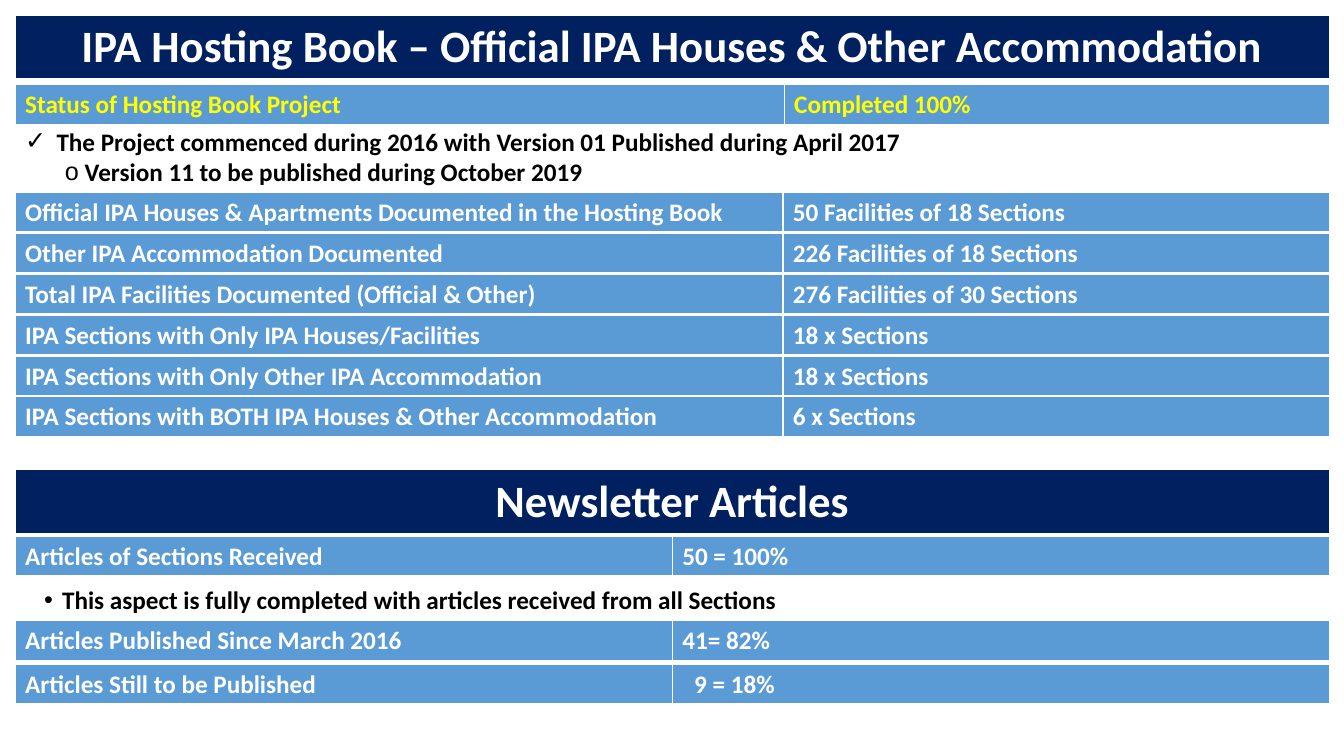
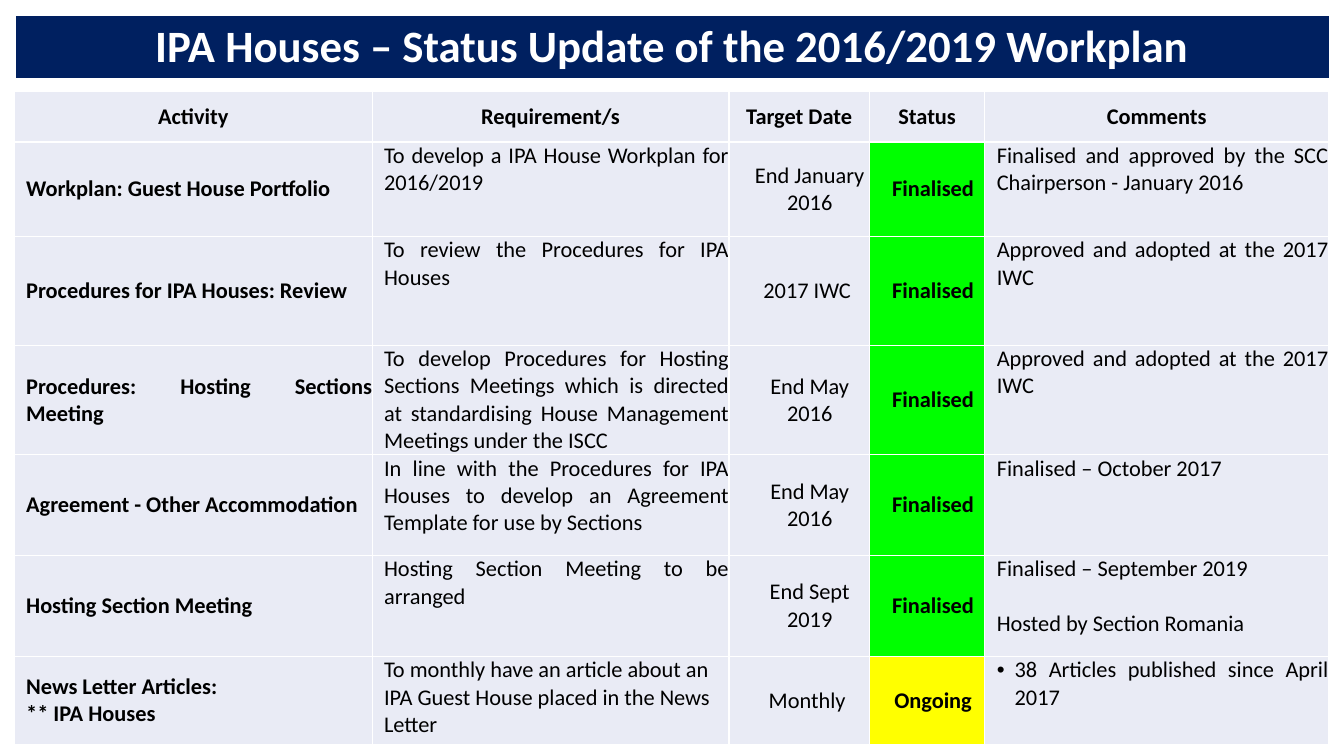
from dataclasses import dataclass

from lxml import etree
from pptx import Presentation
from pptx import util as u
from pptx.dml.color import RGBColor
from pptx.enum import text
from pptx.oxml.ns import qn

# Shared look
NAVY, BLUE, PALE = "002060", "5B9BD5", "E9EBF5"
GREEN, YELLOW, WHITE, BLACK = "00FF00", "FFFF00", "FFFFFF", "000000"
FONT = "Calibri"
LEFT, WIDTH = 0.38, 33.12
BAND_HEIGHT, FACT_HEIGHT = 1.58, 1.02
PAD = 0.23
TEXT_INDENT = 0.3
ALIGN = text.PP_ALIGN
MIDDLE, TOP = text.MSO_ANCHOR.MIDDLE, text.MSO_ANCHOR.TOP


@dataclass
class Line:
    """One formatted paragraph; lengths in centimetres, sizes in points."""
    words: str
    size: int = 18
    color: str = BLACK
    bold: bool = True
    align: ALIGN = ALIGN.LEFT
    margin: float = 0
    hanging: float = 0
    bullet: str = ""
    before: float = 0


@dataclass
class FactGroup:
    """Blue two-column strips, stacked at an equal pitch."""
    top: float
    pitch: float
    first_column: float
    facts: list[tuple[str, str]]
    color: str = WHITE


@dataclass
class Activity:
    """One row of the workplan."""
    name: str
    requirement: str
    target: str
    status: str
    comments: list[str]
    height: float
    name_align: ALIGN = ALIGN.LEFT
    requirement_align: ALIGN = ALIGN.JUSTIFY
    comment_bullet: str = ""


def rgb(color: str) -> RGBColor:
    return RGBColor.from_string(color)


def write(frame, lines: list[Line]) -> None:
    """Fill a text frame with formatted paragraphs."""
    for number, line in enumerate(lines):
        para = frame.add_paragraph() if number else frame.paragraphs[0]
        para.text = line.words
        para.alignment = line.align
        para.space_before = u.Pt(line.before)
        para.font.name = FONT
        para.font.size = u.Pt(line.size)
        para.font.bold = line.bold
        para.font.color.rgb = rgb(line.color)
        # Indents and bullets
        props = para._p.get_or_add_pPr()
        props.set("marL", str(u.Cm(line.margin)))
        props.set("indent", str(-u.Cm(line.hanging)))
        marks = [etree.Element(qn("a:buNone"))]
        if line.bullet:
            marks = [etree.Element(qn("a:buFont"), typeface="Arial"),
                     etree.Element(qn("a:buChar"), char=line.bullet)]
        for mark in marks:
            props.find(qn("a:defRPr")).addprevious(mark)


def add_borders(cell, bottom: float) -> None:
    """White cell borders, with their own width at the bottom."""
    props = cell._tc.get_or_add_tcPr()
    for side, points in (("L", 1), ("R", 1), ("T", 1), ("B", bottom)):
        edge = etree.SubElement(props, qn(f"a:ln{side}"), w=str(u.Pt(points)))
        fill = etree.SubElement(edge, qn("a:solidFill"))
        etree.SubElement(fill, qn("a:srgbClr"), val=WHITE)


def add_grid(page, top: float, columns: list[float], heights: list[float],
             left: float = LEFT):
    """Add an unstyled table and return it."""
    frame = page.shapes.add_table(
        len(heights), len(columns), u.Cm(left), u.Cm(top),
        u.Cm(sum(columns)), u.Cm(sum(heights)))
    table = frame.table
    table.first_row = table.horz_banding = False
    for column, width in zip(table.columns, columns):
        column.width = u.Cm(width)
    for row, height in zip(table.rows, heights):
        row.height = u.Cm(height)
    return table


def set_cell(cell, lines: list[Line], fill: str, bottom: float = 1) -> None:
    add_borders(cell, bottom)
    cell.fill.solid()
    cell.fill.fore_color.rgb = rgb(fill)
    write(cell.text_frame, lines)


def add_band(page, top: float, words: str) -> None:
    """Add a navy heading band."""
    table = add_grid(page, top, [WIDTH], [BAND_HEIGHT])
    line = Line(words, 32, WHITE, align=ALIGN.CENTER)
    set_cell(table.cell(0, 0), [line], NAVY, bottom=3)


def format_list(box, top: float, height: float, lines: list[Line]) -> None:
    box.left, box.top = u.Cm(LEFT), u.Cm(top)
    box.width, box.height = u.Cm(WIDTH), u.Cm(height)
    frame = box.text_frame
    frame.auto_size = text.MSO_AUTO_SIZE.NONE
    frame.vertical_anchor = TOP
    write(frame, lines)


def add_page(deck, layout: int, heading: str):
    """Add a page whose heading is a navy band."""
    page = deck.slides.add_slide(deck.slide_layouts[layout])
    title = page.shapes.title
    title.element.getparent().remove(title.element)
    add_band(page, 0.38, heading)
    return page


def add_facts(page, group: FactGroup) -> None:
    columns = [group.first_column, WIDTH - group.first_column]
    for row, pair in enumerate(group.facts):
        table = add_grid(page, group.top + row * group.pitch, columns, [FACT_HEIGHT])
        for column, words in enumerate(pair):
            # A one-digit count lines up under the two-digit ones
            margin = TEXT_INDENT if words.startswith("9 =") else 0
            line = Line(words, color=group.color, margin=margin)
            set_cell(table.cell(0, column), [line], BLUE, bottom=3)


def add_workplan(page, activities: list[Activity]) -> None:
    columns = [9.02, 8.99, 3.54, 2.91, 8.66]
    heights = [1.27] + [activity.height for activity in activities]
    table = add_grid(page, 2.31, columns, heights, left=0.36)
    for cell in table.iter_cells():
        cell.margin_left = cell.margin_right = 0
        cell.margin_top = cell.margin_bottom = 0

    # Heading row
    headings = ["Activity", "Requirement/s", "Target Date", "Status", "Comments"]
    for column, words in enumerate(headings):
        cell = table.cell(0, column)
        cell.vertical_anchor = MIDDLE
        set_cell(cell, [Line(words, 16, align=ALIGN.CENTER)], PALE)

    def entry(words: str, align: ALIGN, bold: bool = False) -> Line:
        return Line(words, 16, bold=bold, align=align, margin=TEXT_INDENT)

    # Activity rows
    for row, activity in enumerate(activities, 1):
        comments = [entry(words, ALIGN.JUSTIFY) for words in activity.comments]
        for comment in comments[1:]:
            comment.before = 19.5
        if activity.comment_bullet:
            comments[0].bullet = activity.comment_bullet
            comments[0].margin, comments[0].hanging = 0.75, 0.45
        contents = [
            [entry(activity.name, activity.name_align, True)],
            [entry(activity.requirement, activity.requirement_align)],
            [entry(activity.target, ALIGN.CENTER)],
            [entry(activity.status, ALIGN.CENTER, True)],
            comments,
        ]
        status_fill = GREEN if activity.status == "Finalised" else YELLOW
        fills = [PALE, PALE, PALE, status_fill, PALE]
        anchors = [MIDDLE, TOP, MIDDLE, MIDDLE, TOP]
        for column, lines in enumerate(contents):
            cell = table.cell(row, column)
            cell.vertical_anchor = anchors[column]
            set_cell(cell, lines, fills[column])
        table.cell(row, 2).margin_left = u.Cm(PAD)


PROJECT_LIST = [
    Line("The Project commenced during 2016 with Version 01 Published during April 2017",
         align=ALIGN.JUSTIFY, margin=0.79, hanging=0.79, bullet="✓"),
    Line("Version 11 to be published during October 2019",
         align=ALIGN.JUSTIFY, margin=1.5, hanging=0.5, bullet="o"),
]
ARTICLE_LIST = [
    Line("This aspect is fully completed with articles received from all Sections",
         margin=0.93, hanging=0.45, bullet="•"),
]
FACT_GROUPS = [
    FactGroup(2.13, 0, 19.38, [
        ("Status of Hosting Book Project", "Completed 100%"),
    ], YELLOW),
    FactGroup(4.85, 1.03, 19.35, [
        ("Official IPA Houses & Apartments Documented in the Hosting Book",
         "50 Facilities of 18 Sections"),
        ("Other IPA Accommodation Documented", "226 Facilities of 18 Sections"),
        ("Total IPA Facilities Documented (Official & Other)",
         "276 Facilities of 30 Sections"),
        ("IPA Sections with Only IPA Houses/Facilities", "18 x Sections"),
        ("IPA Sections with Only Other IPA Accommodation", "18 x Sections"),
        ("IPA Sections with BOTH IPA Houses & Other Accommodation", "6 x Sections"),
    ]),
    FactGroup(13.51, 0, WIDTH / 2, [
        ("Articles of Sections Received", "50 = 100%"),
    ]),
    FactGroup(15.64, 1.1, WIDTH / 2, [
        ("Articles Published Since March 2016", "41= 82%"),
        ("Articles Still to be Published", "9 = 18%"),
    ]),
]
ACTIVITIES = [
    Activity("Workplan: Guest House Portfolio",
             "To develop a IPA House Workplan for 2016/2019",
             "End January 2016", "Finalised",
             ["Finalised and approved by the SCC Chairperson - January 2016 "], 2.38),
    Activity("Procedures for IPA Houses: Review",
             "To review the Procedures for IPA Houses",
             "2017 IWC ", "Finalised", ["Approved and adopted at the 2017 IWC"], 2.74),
    Activity("Procedures: Hosting Sections Meeting",
             "To develop Procedures for Hosting Sections Meetings which is directed "
             "at standardising House Management Meetings under the ISCC",
             "End May 2016", "Finalised", ["Approved and adopted at the 2017 IWC"], 2.74,
             name_align=ALIGN.JUSTIFY),
    Activity("Agreement - Other Accommodation",
             "In line with the Procedures for IPA Houses to develop an Agreement "
             "Template for use by Sections",
             "End May 2016", "Finalised", ["Finalised – October 2017"], 2.54),
    Activity("Hosting Section Meeting", "Hosting Section Meeting to be arranged",
             "End Sept 2019", "Finalised",
             ["Finalised – September 2019", "Hosted by Section Romania"], 2.54),
    Activity("News Letter Articles: \n** IPA Houses",
             "To monthly have an article about an IPA Guest House placed in the News Letter",
             "Monthly ", "Ongoing", ["38 Articles published since April 2017"], 2.22,
             requirement_align=ALIGN.LEFT, comment_bullet="•"),
]


def main() -> None:
    deck = Presentation()
    deck.slide_width, deck.slide_height = u.Cm(33.87), u.Cm(19.05)

    # Hosting book and newsletter figures
    page = add_page(deck, 3, "IPA Hosting Book – Official IPA Houses & Other Accommodation")
    project_box, article_box = page.placeholders
    format_list(project_box, 3.05, 1.8, PROJECT_LIST)
    format_list(article_box, 14.6, 1.02, ARTICLE_LIST)
    add_band(page, 11.84, "Newsletter Articles")
    for group in FACT_GROUPS:
        add_facts(page, group)

    # Workplan status
    page = add_page(deck, 5, "IPA Houses – Status Update of the 2016/2019 Workplan")
    add_workplan(page, ACTIVITIES)

    deck.save("out.pptx")


if __name__ == "__main__":
    main()
